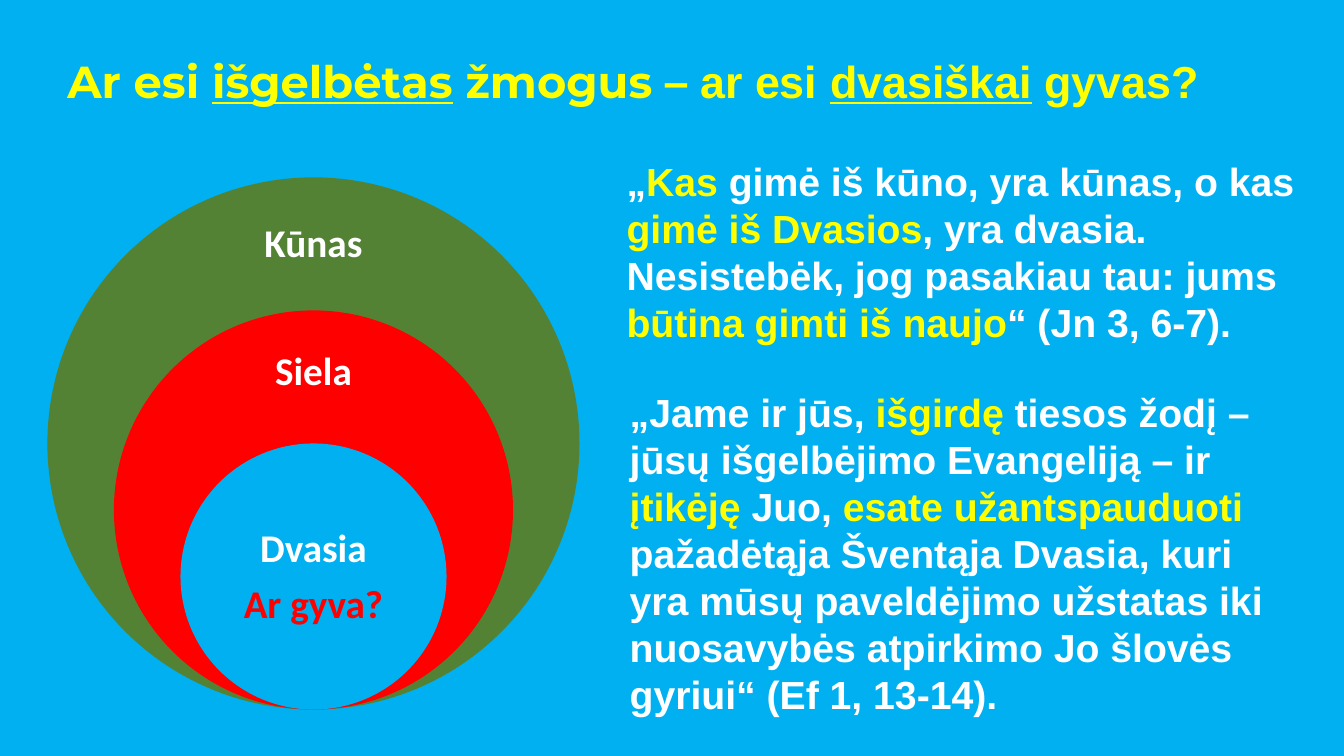
from dataclasses import dataclass

from pptx import Presentation
from pptx import util as u
from pptx.dml.color import RGBColor
from pptx.enum import shapes, text

SKY = RGBColor(0x00, 0xB0, 0xF0)
GREEN = RGBColor(0x54, 0x82, 0x35)
RED = RGBColor(0xFF, 0x00, 0x00)
YELLOW = RGBColor(0xFF, 0xFF, 0x00)
WHITE = RGBColor(0xFF, 0xFF, 0xFF)

CENTER_X, CIRCLE_BOTTOM, OUTER_DIAMETER = 7.9, 17.88, 13.41
LABEL_WIDTH, LABEL_INSET = 4.7, 0.56


@dataclass
class Run:
    text: str
    color: RGBColor = WHITE
    font: str | None = None
    underline: bool | None = None


@dataclass
class Ring:
    scale: float
    fill: RGBColor
    label_top: float
    label_height: float
    lines: list[Run]


@dataclass
class TextBlock:
    left: float
    top: float
    width: float
    height: float
    paragraphs: list[list[Run]]
    size: int = 28
    font: str = "Arial"
    wrap: bool = True


RINGS = [
    Ring(1, GREEN, 5.16, 2.01, [Run("Kūnas")]),
    Ring(0.75, RED, 8.46, 1.88, [Run("Siela")]),
    Ring(0.5, SKY, 12.88, 3.35, [Run("Dvasia"), Run("Ar gyva?", RED)]),
]

BLOCKS = [
    # Verse from Ephesians
    TextBlock(15.62, 9.65, 16.94, 8.64, [[
        Run("„Jame ir jūs, "),
        Run("išgirdę", YELLOW),
        Run(" tiesos žodį – jūsų išgelbėjimo Evangeliją – ir "),
        Run("įtikėję", YELLOW),
        Run(" Juo, "),
        Run("esate užantspauduoti ", YELLOW),
        Run("pažadėtąja Šventąja Dvasia, kuri yra mūsų paveldėjimo užstatas "
            "iki nuosavybės atpirkimo Jo šlovės gyriui“ (Ef 1, 13-14)."),
    ]]),
    # Title
    TextBlock(1.45, 1.22, 30.12, 1.63, [[
        Run("Ar esi ", YELLOW),
        Run("išgelbėtas", YELLOW, underline=True),
        Run(" žmogus – ", YELLOW),
        Run("ar esi ", YELLOW, "Arial"),
        Run("dvasiškai", YELLOW, "Arial", True),
        Run(" gyvas?", YELLOW, "Arial"),
    ]], size=32, font="Montserrat", wrap=False),
    # Verse from John
    TextBlock(15.54, 3.84, 17.73, 5.05, [
        [Run("„"), Run("Kas ", YELLOW), Run("gimė iš kūno, yra kūnas, o kas")],
        [Run("gimė iš Dvasios", YELLOW), Run(", yra dvasia.")],
        [Run("Nesistebėk, jog pasakiau tau: jums")],
        [Run("būtina gimti iš naujo", YELLOW), Run("“ (Jn 3, 6-7).")],
    ]),
]


def write_paragraphs(frame, paragraphs: list[list[Run]], font: str, size: int) -> None:
    for index, runs in enumerate(paragraphs):
        paragraph = frame.add_paragraph() if index else frame.paragraphs[0]
        paragraph.font.name = font
        paragraph.font.size = u.Pt(size)
        paragraph.font.bold = True
        for item in runs:
            run = paragraph.add_run()
            run.text = item.text
            run.font.color.rgb = item.color
            run.font.underline = item.underline
            if item.font:
                run.font.name = item.font


def draw_ring(group, ring: Ring) -> None:
    diameter = OUTER_DIAMETER * ring.scale
    circle = group.shapes.add_shape(
        shapes.MSO_SHAPE.OVAL, u.Cm(CENTER_X - diameter / 2),
        u.Cm(CIRCLE_BOTTOM - diameter), u.Cm(diameter), u.Cm(diameter))
    circle.shadow.inherit = False
    circle.fill.solid()
    circle.fill.fore_color.rgb = ring.fill
    circle.line.fill.background()

    label = group.shapes.add_textbox(
        u.Cm(CENTER_X - LABEL_WIDTH / 2), u.Cm(ring.label_top),
        u.Cm(LABEL_WIDTH), u.Cm(ring.label_height))
    frame = label.text_frame
    frame.word_wrap = True
    frame.vertical_anchor = text.MSO_ANCHOR.MIDDLE
    frame.margin_left = frame.margin_right = u.Cm(LABEL_INSET)
    frame.margin_top = frame.margin_bottom = u.Cm(LABEL_INSET)
    write_paragraphs(frame, [[line] for line in ring.lines], "Calibri", 28)
    for paragraph in frame.paragraphs:
        paragraph.alignment = text.PP_ALIGN.CENTER
        paragraph.line_spacing = 0.9
        paragraph.space_after = u.Pt(9.8)


def draw_block(slide, block: TextBlock) -> None:
    box = slide.shapes.add_textbox(
        u.Cm(block.left), u.Cm(block.top), u.Cm(block.width), u.Cm(block.height))
    frame = box.text_frame
    frame.word_wrap = block.wrap
    frame.auto_size = text.MSO_AUTO_SIZE.SHAPE_TO_FIT_TEXT
    write_paragraphs(frame, block.paragraphs, block.font, block.size)


def main() -> None:
    presentation = Presentation()
    presentation.slide_width = u.Cm(33.87)
    presentation.slide_height = u.Cm(19.05)
    slide = presentation.slides.add_slide(presentation.slide_layouts[6])
    slide.background.fill.solid()
    slide.background.fill.fore_color.rgb = SKY

    # Nested circles: body, soul and spirit
    group = slide.shapes.add_group_shape()
    for ring in RINGS:
        draw_ring(group, ring)

    # Title and verses
    for block in BLOCKS:
        draw_block(slide, block)

    presentation.save("out.pptx")


if __name__ == "__main__":
    main()
